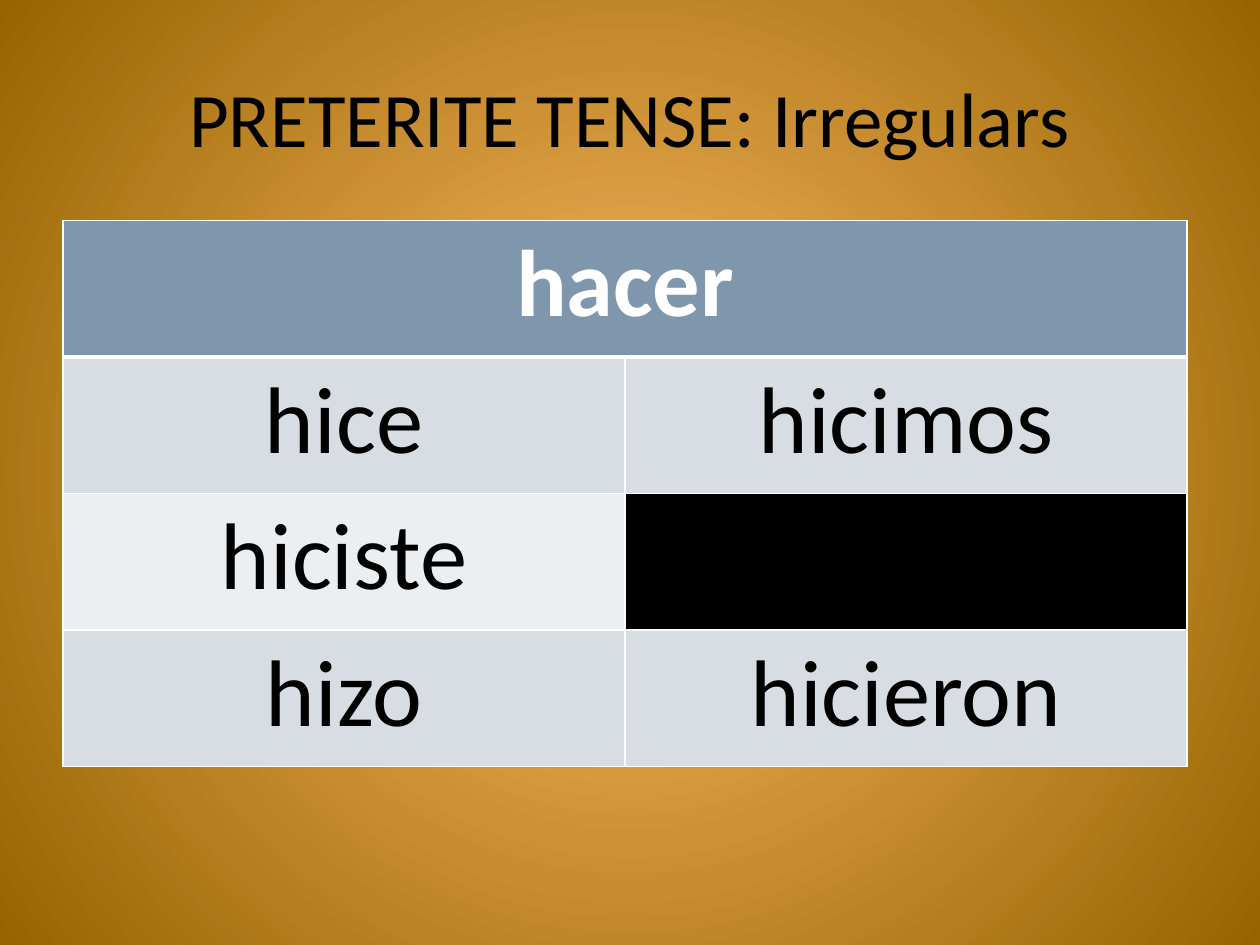
from lxml import etree
from pptx import Presentation
from pptx.dml.color import RGBColor
from pptx.enum.text import MSO_ANCHOR, PP_ALIGN
from pptx.oxml.ns import qn
from pptx.util import Pt

CENTER = PP_ALIGN.CENTER
MIDDLE = MSO_ANCHOR.MIDDLE
COLORS = {
    "glow": "FFBA65",
    "edge": "956400",
    "black": "000000",
    "white": "FFFFFF",
    "header": "7E97AD",
    "band": "D8DDE3",
    "light": "ECEFF1",
}


def write_text(frame, text, color, **format_values):
    para = frame.paragraphs[0]
    para.alignment = CENTER
    span = para.add_run()
    span.text = text
    span.font.color.rgb = RGBColor.from_string(COLORS[color])
    for name, value in format_values.items():
        setattr(span.font, name, value)


def add_borders(cell, widths):
    properties = cell._tc.get_or_add_tcPr()
    for index, (side, width) in enumerate(widths.items()):
        line = etree.Element(qn(f"a:ln{side}"), w=str(Pt(width)))
        fill = etree.SubElement(line, qn("a:solidFill"))
        etree.SubElement(fill, qn("a:srgbClr"), val=COLORS["white"])
        properties.insert(index, line)


deck = Presentation()
deck.slide_width, deck.slide_height = Pt(720), Pt(540)
page = deck.slides.add_slide(deck.slide_layouts[6])

background = page.background.fill
background.gradient()
for stop, color, position in zip(background.gradient_stops, ("glow", "edge"), (0, 1)):
    stop.color.rgb = RGBColor.from_string(COLORS[color])
    stop.position = position
gradient = page.element.find(".//" + qn("a:gradFill"))
gradient.remove(gradient.find(qn("a:lin")))
circle = etree.Element(qn("a:path"), path="circle")
etree.SubElement(circle, qn("a:fillToRect"), {side: "50000" for side in "ltrb"})
gradient.find(qn("a:gsLst")).addnext(circle)

title = page.shapes.add_textbox(Pt(36), Pt(21.6), Pt(648), Pt(90)).text_frame
title.word_wrap = True
title.vertical_anchor = MIDDLE
write_text(title, "PRETERITE TENSE: Irregulars", "black", name="Calibri", size=Pt(44))

rows = [
    [("hacer", "header"), ("", "header")],
    [("hice", "band"), ("hicimos", "band")],
    [("hiciste", "light"), ("", "black")],
    [("hizo", "band"), ("hicieron", "band")],
]
table = page.shapes.add_table(4, 2, Pt(36), Pt(126), Pt(642.4), Pt(312)).table
table.cell(0, 0).merge(table.cell(0, 1))

for row_index, row in enumerate(rows):
    is_header = row_index == 0
    for column_index, (text, fill) in enumerate(row):
        cell = table.cell(row_index, column_index)
        cell.fill.solid()
        cell.fill.fore_color.rgb = RGBColor.from_string(COLORS[fill])
        top = 3 if row_index == 1 else 1
        bottom = 3 if is_header else 1
        add_borders(cell, {"L": 1, "R": 1, "T": top, "B": bottom})
        if text:
            write_text(cell.text_frame, text, "white" if is_header else "black",
                       name="Calibri", size=Pt(54), bold=is_header)

deck.save("out.pptx")
